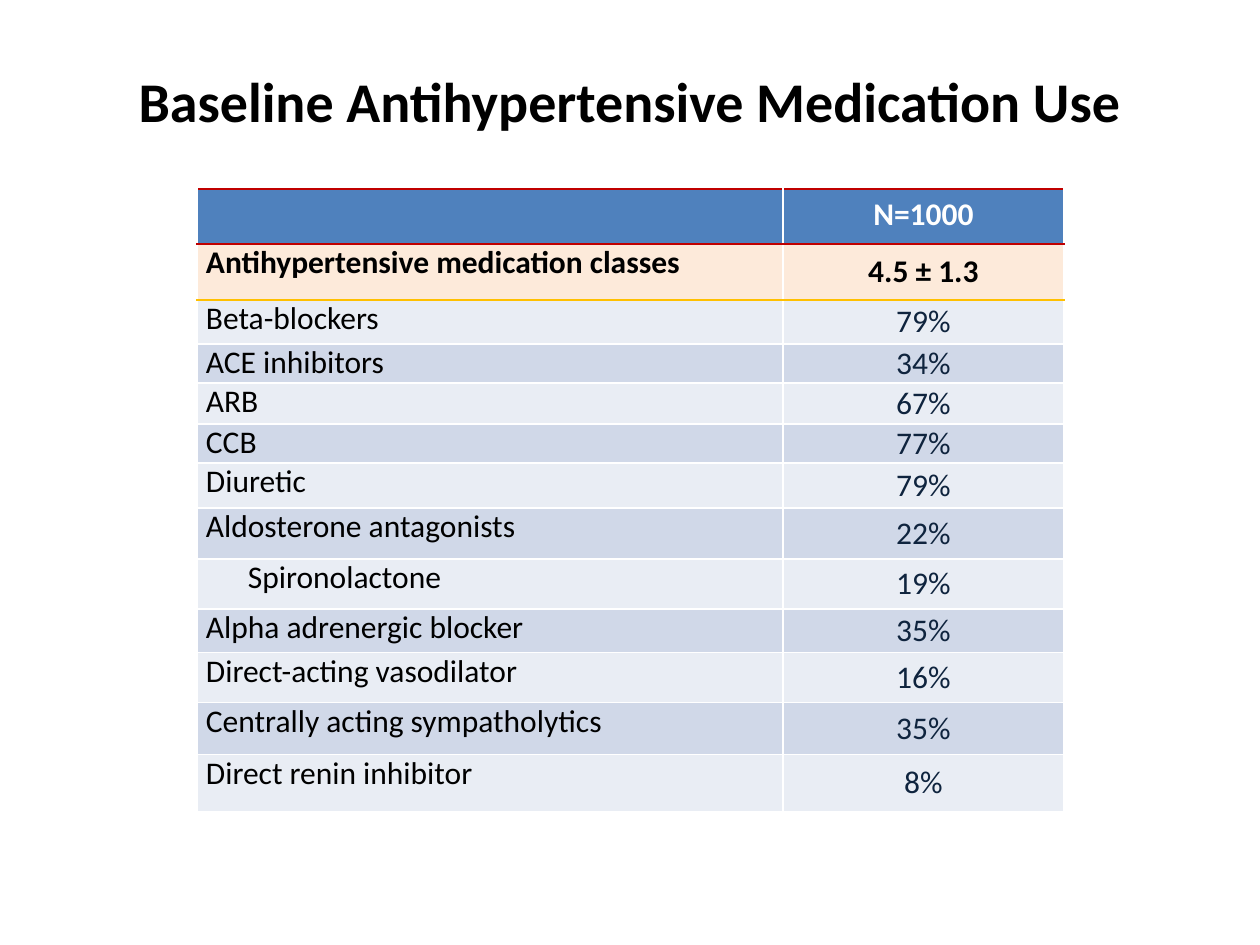
from pptx import Presentation
from pptx import util as u
from pptx.dml.color import RGBColor
from pptx.enum import text
from pptx.oxml import ns, xmlchemy

PX = 914400 / 126
FONT = "Calibri"
BLACK = RGBColor(0x00, 0x00, 0x00)
WHITE = RGBColor(0xFF, 0xFF, 0xFF)
NAVY = RGBColor(0x0F, 0x24, 0x3E)
BLUE = RGBColor(0x4F, 0x81, 0xBD)
PEACH = RGBColor(0xFD, 0xEA, 0xDA)
RED = RGBColor(0xC0, 0x00, 0x00)
GOLD = RGBColor(0xFF, 0xC0, 0x00)
BANDS = [RGBColor(0xE9, 0xED, 0xF4), RGBColor(0xD0, 0xD8, 0xE8)]

TABLE_LEFT, TABLE_TOP = 197, 189
COLUMN_WIDTHS = [586, 281]
INSET = 9
SUB_INDENT = 42

HEADER = ("", "N=1000", 55)
SUMMARY = ("Antihypertensive medication classes", "4.5 ± 1.3", 56)
MEDICATIONS = [
    ("Beta-blockers", "79%", 44),
    ("ACE inhibitors", "34%", 39),
    ("ARB", "67%", 41),
    ("CCB", "77%", 39),
    ("Diuretic", "79%", 45),
    ("Aldosterone antagonists", "22%", 51),
    ("Spironolactone", "19%", 50),
    ("Alpha adrenergic blocker", "35%", 44),
    ("Direct-acting vasodilator", "16%", 50),
    ("Centrally acting sympatholytics", "35%", 52),
    ("Direct renin inhibitor", "8%", 57),
]
SUBCLASSES = {"Spironolactone"}


def px(length):
    return u.Emu(round(length * PX))


def write(frame, words, size=18, color=BLACK, bold=False, align=text.PP_ALIGN.LEFT):
    para = frame.paragraphs[0]
    para.alignment = align
    para.font.size = u.Pt(size)
    if not words:
        return
    span = para.add_run()
    span.text = words
    span.font.name = FONT
    span.font.size = u.Pt(size)
    span.font.bold = bold
    span.font.color.rgb = color


def add_title(page, words):
    title = page.shapes.title
    title.left, title.top, title.width, title.height = map(px, (63, 21, 1134, 158))
    title.text_frame.vertical_anchor = text.MSO_ANCHOR.MIDDLE
    write(title.text_frame, words, size=32, bold=True, align=text.PP_ALIGN.CENTER)


def set_borders(cell, top, bottom):
    properties = cell._tc.get_or_add_tcPr()
    for side, color in zip("LRTB", (WHITE, WHITE, top, bottom)):
        line = xmlchemy.OxmlElement(f"a:ln{side}")
        line.set("w", str(u.Pt(1)))
        fill = line.makeelement(ns.qn("a:solidFill"))
        fill.append(fill.makeelement(ns.qn("a:srgbClr"), val=str(color)))
        line.append(fill)
        properties.append(line)


def style_cell(cell, fill, top=WHITE, bottom=WHITE):
    set_borders(cell, top, bottom)
    cell.fill.solid()
    cell.fill.fore_color.rgb = fill


def set_insets(cell, indent=0):
    cell.margin_left = px(INSET + indent)
    cell.margin_right = px(INSET)
    cell.margin_top = cell.margin_bottom = 0


def fill_row(row, label, value, fill, value_color, bold=False, tight=True, **borders):
    name_cell, value_cell = row.cells
    for cell in row.cells:
        style_cell(cell, fill, **borders)
    if tight:
        set_insets(name_cell, SUB_INDENT if label in SUBCLASSES else 0)
        set_insets(value_cell)
        value_cell.vertical_anchor = text.MSO_ANCHOR.MIDDLE
    write(name_cell.text_frame, label, bold=bold)
    write(value_cell.text_frame, value, color=value_color, bold=bold,
          align=text.PP_ALIGN.CENTER)


def add_medication_table(page):
    records = [HEADER, SUMMARY, *MEDICATIONS]
    heights = [height for _, _, height in records]
    table = page.shapes.add_table(
        len(records), len(COLUMN_WIDTHS), px(TABLE_LEFT), px(TABLE_TOP),
        px(sum(COLUMN_WIDTHS)), px(sum(heights))).table
    for column, width in zip(table.columns, COLUMN_WIDTHS):
        column.width = px(width)
    for row, height in zip(table.rows, heights):
        row.height = px(height)

    header, summary, *rows = table.rows
    fill_row(header, *HEADER[:2], BLUE, WHITE, bold=True, tight=False, top=RED, bottom=RED)
    fill_row(summary, *SUMMARY[:2], PEACH, BLACK, bold=True, top=RED, bottom=GOLD)
    for index, (row, (label, value, _)) in enumerate(zip(rows, MEDICATIONS)):
        fill_row(row, label, value, BANDS[index % 2], NAVY,
                 top=WHITE if index else GOLD)


def main():
    deck = Presentation()
    deck.slide_width, deck.slide_height = u.Inches(10), u.Inches(7.5)
    page = deck.slides.add_slide(deck.slide_layouts[5])
    add_title(page, "Baseline Antihypertensive Medication Use")
    add_medication_table(page)
    deck.save("out.pptx")


if __name__ == "__main__":
    main()
